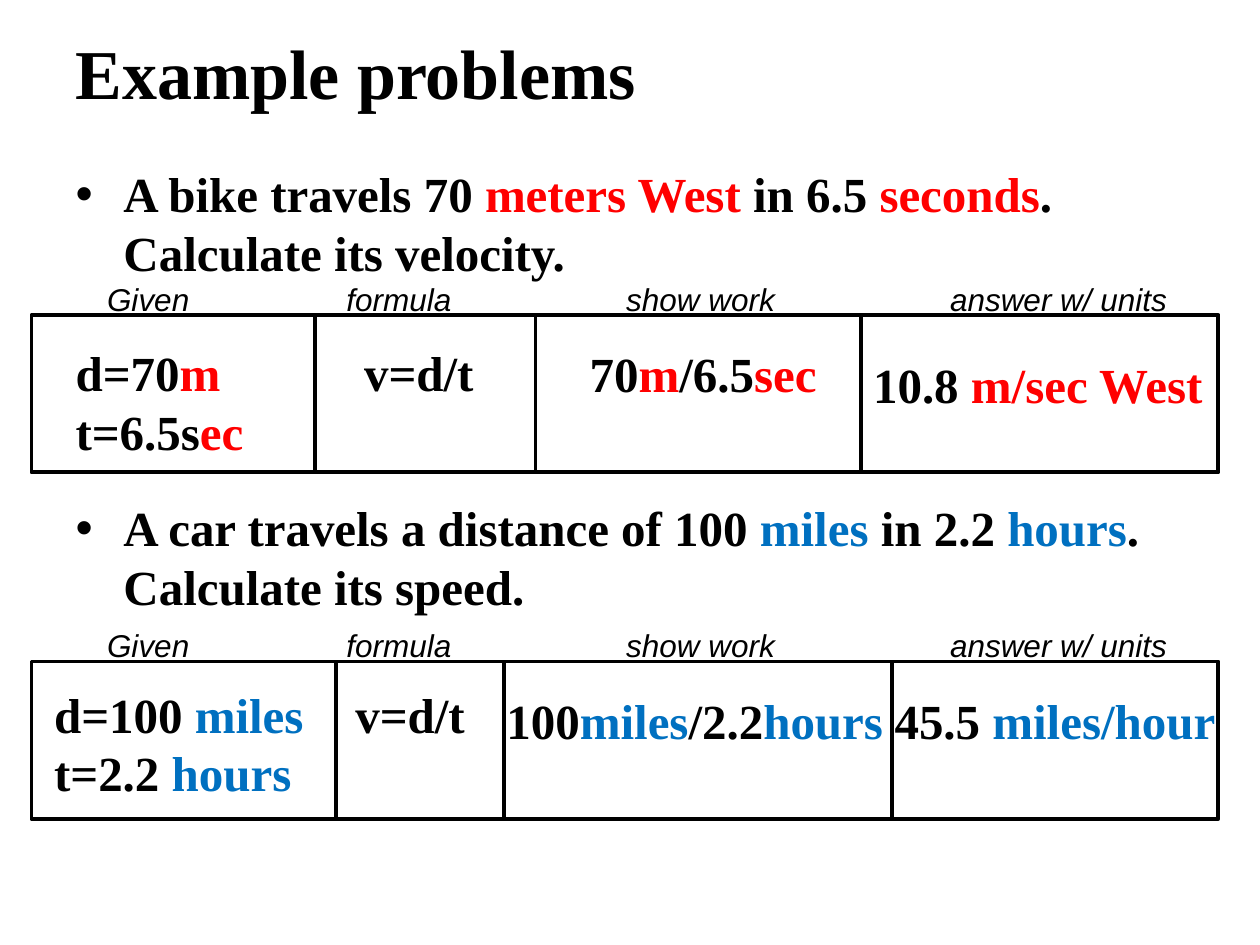
from pptx import Presentation
from pptx.dml.color import RGBColor
from pptx.enum.shapes import MSO_CONNECTOR, MSO_SHAPE
from pptx.enum.text import MSO_ANCHOR, PP_ALIGN
from pptx.oxml.ns import qn
from pptx.util import Inches, Pt
from lxml import etree

RECT, LINE = MSO_SHAPE.RECTANGLE, MSO_CONNECTOR.STRAIGHT
LEFT, MIDDLE, TOP = PP_ALIGN.LEFT, MSO_ANCHOR.MIDDLE, MSO_ANCHOR.TOP
BLACK, RED, BLUE = "000000", "FF0000", "0070C0"

HEAD = {"name": "Times New Roman", "size": Pt(40), "bold": True}
BODY = {"name": "Times New Roman", "size": Pt(28), "bold": True}
NOTE = {"name": "Arial", "size": Pt(18), "italic": True}

# Bars mark the start and end of words in the accent colour.
TITLE = "Example problems"
LABELS = [("Given", 0.85), ("formula", 2.75), ("show work", 4.97),
          ("answer w/ units", 7.54)]
PROBLEMS = [
    {"hue": RED, "top": 2.5, "ask_top": 1.3, "note_top": 2.22,
     "ask": "A bike travels 70 |meters West| in 6.5 |seconds|. "
            "Calculate its velocity.",
     "rules": [2.5, 4.25, 6.83],
     "cells": [(0.6, 0.22, ["d=70|m", "t=6.5s|ec"]),
               (2.89, 0.22, ["v=d/t"]),
               (4.68, 0.23, ["70|m|/6.5|sec"]),
               (6.93, 0.31, ["10.8 |m/sec West"])]},
    {"hue": BLUE, "top": 5.25, "ask_top": 3.95, "note_top": 4.97,
     "ask": "A car travels a distance of 100 |miles| in 2.2 |hours|. "
            "Calculate its speed.",
     "rules": [2.67, 4, 7.08],
     "cells": [(0.43, 0.18, ["d=100 |miles", "t=2.2 |hours"]),
               (2.82, 0.18, ["v=d/t"]),
               (4.02, 0.23, ["100|miles|/2.2|hours"]),
               (7.1, 0.23, ["45.5 |miles/hour"])]},
]
BOX_X, BOX_W, BOX_H = 0.25, 9.42, 1.25


def color(code):
    return RGBColor.from_string(code)


def write(frame, lines, style, hue=BLACK, wrap=False, anchor=TOP):
    """Fill a text frame, with every second part of a line in the hue."""
    form = {"word_wrap": wrap, "vertical_anchor": anchor, "margin_left": 0,
            "margin_right": 0, "margin_top": 0, "margin_bottom": 0}
    for key, val in form.items():
        setattr(frame, key, val)
    for i, line in enumerate(lines):
        para = frame.add_paragraph() if i else frame.paragraphs[0]
        para.alignment = LEFT
        for j, part in enumerate(line.split("|")):
            run = para.add_run()
            run.text = part
            for key, val in style.items():
                setattr(run.font, key, val)
            run.font.color.rgb = color(hue if j % 2 else BLACK)


def add_text(slide, x, y, w, h, lines, style, hue=BLACK, wrap=False):
    box = slide.shapes.add_textbox(*map(Inches, (x, y, w, h)))
    write(box.text_frame, lines, style, hue, wrap)
    return box


def add_bullet(para):
    props = para._p.get_or_add_pPr()
    props.set("marL", str(Inches(0.38)))
    props.set("indent", str(-Inches(0.38)))
    etree.SubElement(props, qn("a:buFont")).set("typeface", "Arial")
    etree.SubElement(props, qn("a:buChar")).set("char", "•")


def ink(line):
    line.color.rgb = color(BLACK)
    line.width = Pt(2.25)


def add_frame(slide, top, rules):
    box = slide.shapes.add_shape(
        RECT, *map(Inches, (BOX_X, top, BOX_W, BOX_H)))
    box.shadow.inherit = False
    box.fill.background()
    ink(box.line)
    for x in rules:
        rule = slide.shapes.add_connector(
            LINE, *map(Inches, (x, top, x, top + BOX_H)))
        etree.SubElement(rule._element.spPr, qn("a:effectLst"))
        ink(rule.line)
        # Effects must follow the line in the shape properties.
        rule._element.spPr.append(rule._element.spPr.find(qn("a:effectLst")))


def add_problem(slide, item):
    hue, top = item["hue"], item["top"]
    ask = add_text(slide, 0.6, item["ask_top"], 8.72, 0.95,
                   [item["ask"]], BODY, hue, True)
    add_bullet(ask.text_frame.paragraphs[0])
    add_frame(slide, top, item["rules"])
    for text, x in LABELS:
        add_text(slide, x, item["note_top"], 1.8, 0.3, [text], NOTE)
    edges = item["rules"] + [BOX_X + BOX_W]
    for (x, drop, lines), edge in zip(item["cells"], edges):
        add_text(slide, x, top + drop, edge - x, 0.47 * len(lines),
                 lines, BODY, hue)


def main():
    deck = Presentation()
    deck.slide_width, deck.slide_height = Inches(10), Inches(7.5)
    slide = deck.slides.add_slide(deck.slide_layouts[5])
    title = slide.shapes.title
    title.left, title.top, title.width, title.height = map(
        Inches, (0.6, 0.3, 8.8, 0.53))
    write(title.text_frame, [TITLE], HEAD, wrap=True, anchor=MIDDLE)
    for item in PROBLEMS:
        add_problem(slide, item)
    deck.save("out.pptx")


if __name__ == "__main__":
    main()
